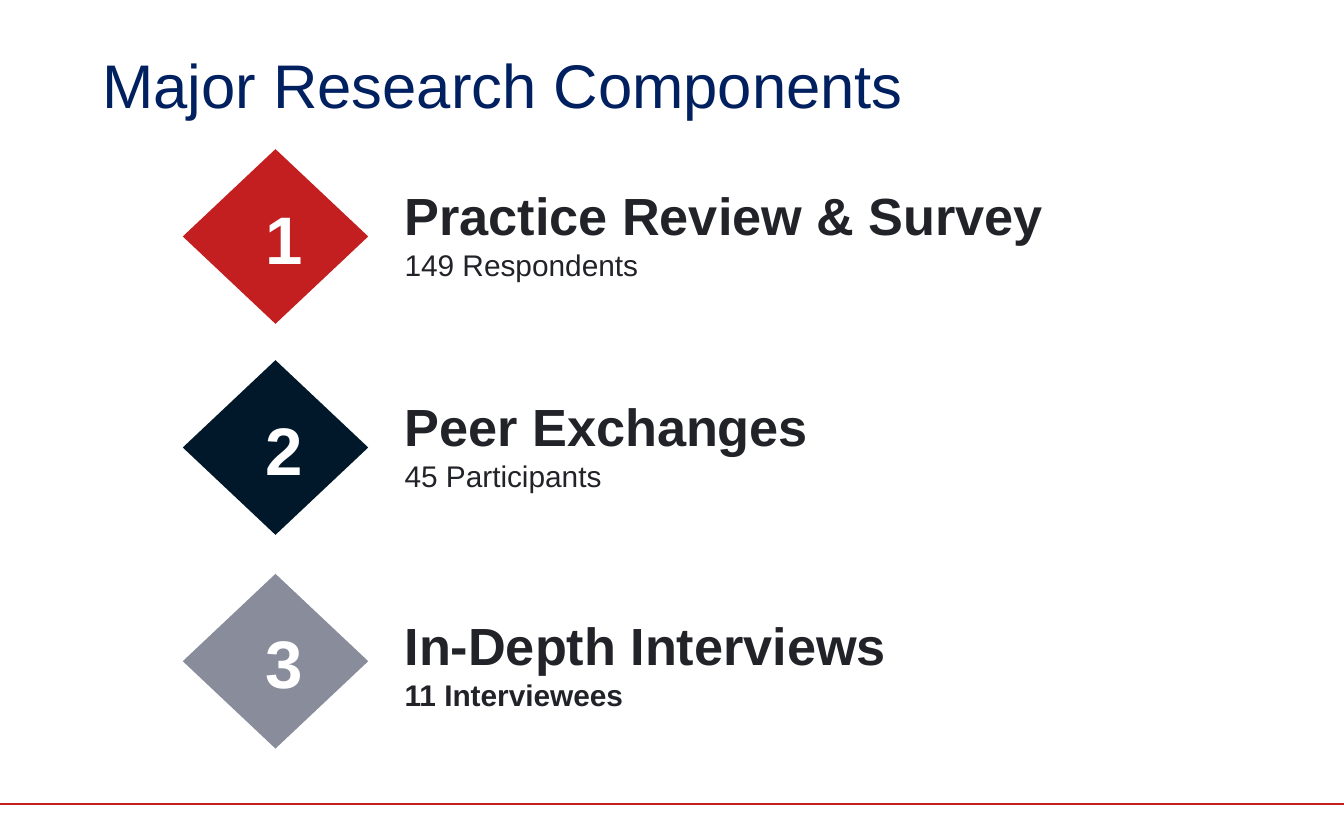
import pptx
import pptx.dml.color
import pptx.enum.shapes
import pptx.enum.text
import pptx.oxml
import pptx.util

PX = 9144  # 100 px to the inch
FONT = "Arial"
COLORS = {
    "title": "002060",
    "text": "222328",
    "white": "FFFFFF",
    "red": "C31F20",
    "navy": "00182A",
    "gray": "898C9B",
}
ANCHOR = pptx.enum.text.MSO_ANCHOR
ALIGN = pptx.enum.text.PP_ALIGN

# number, colour, heading, detail, detail is bold, diamond top, text top, text width
COMPONENTS = [
    ("1", "red", "Practice Review & Survey", "149 Respondents", False, 111, 130, 569),
    ("2", "navy", "Peer Exchanges", "45 Participants", False, 268, 287, 395),
    ("3", "gray", "In-Depth Interviews", "11 Interviewees", True, 427, 450, 588),
]


def px(n):
    return pptx.util.Emu(n * PX)


def rgb(name):
    return pptx.dml.color.RGBColor.from_string(COLORS[name])


def set_frame(tf, anchor, insets, wrap=True):
    """Insets are left, top, right and bottom in px."""
    tf.word_wrap = wrap
    tf.auto_size = pptx.enum.text.MSO_AUTO_SIZE.NONE
    tf.vertical_anchor = anchor
    tf.margin_left, tf.margin_top, tf.margin_right, tf.margin_bottom = map(px, insets)


def write(p, text, size, color="text", bold=False, align=ALIGN.LEFT, spacing=1.0):
    p.alignment = align
    p.line_spacing = spacing
    r = p.add_run()
    r.text = text
    r.font.name = FONT
    r.font.size = pptx.util.Pt(size)
    r.font.bold = bold
    r.font.color.rgb = rgb(color)


def add_title(s, text):
    sp = s.shapes.title
    sp.left, sp.top, sp.width, sp.height = map(px, (69, 33, 862, 76))
    set_frame(sp.text_frame, ANCHOR.TOP, (7, 8, 7, 4))
    write(sp.text_frame.paragraphs[0], text, 33, color="title", spacing=0.9)


def add_badge(s, number, color, top):
    """Group a coloured diamond with its number."""
    group = s.shapes.add_group_shape()
    sp = group.shapes.add_shape(
        pptx.enum.shapes.MSO_SHAPE.DIAMOND, px(136), px(top), px(138), px(130))
    sp.shadow.inherit = False
    sp.fill.solid()
    sp.fill.fore_color.rgb = rgb(color)
    sp.line.fill.background()
    tf = group.shapes.add_textbox(px(189), px(top + 26), px(33), px(71)).text_frame
    set_frame(tf, ANCHOR.MIDDLE, (12, 8, 0, 0), wrap=False)
    write(tf.paragraphs[0], number, 36, color="white", bold=True, align=ALIGN.CENTER)


def add_description(s, heading, detail, detail_bold, top, width):
    tf = s.shapes.add_textbox(px(294), px(top), px(width), px(84)).text_frame
    set_frame(tf, ANCHOR.BOTTOM, (7, 4, 7, 4))
    write(tf.paragraphs[0], heading, 28, bold=True)
    write(tf.add_paragraph(), detail, 16, bold=detail_bold)


def add_footer_rule(s):
    line = s.shapes.add_connector(
        pptx.enum.shapes.MSO_CONNECTOR.STRAIGHT, px(0), px(598), px(1000), px(598))
    line.line.color.rgb = rgb("red")
    line.line.width = pptx.util.Pt(1)
    line._element.spPr.append(pptx.oxml.parse_xml(
        '<a:effectLst xmlns:a="http://schemas.openxmlformats.org/drawingml/2006/main"/>'))


def main():
    prs = pptx.Presentation()
    prs.slide_width, prs.slide_height = px(1000), px(625)
    s = prs.slides.add_slide(prs.slide_layouts.get_by_name("Title Only"))
    add_footer_rule(s)
    add_title(s, "Major Research Components")
    for number, color, heading, detail, bold, badge_top, text_top, width in COMPONENTS:
        add_badge(s, number, color, badge_top)
        add_description(s, heading, detail, bold, text_top, width)
    prs.save("out.pptx")


if __name__ == "__main__":
    main()
